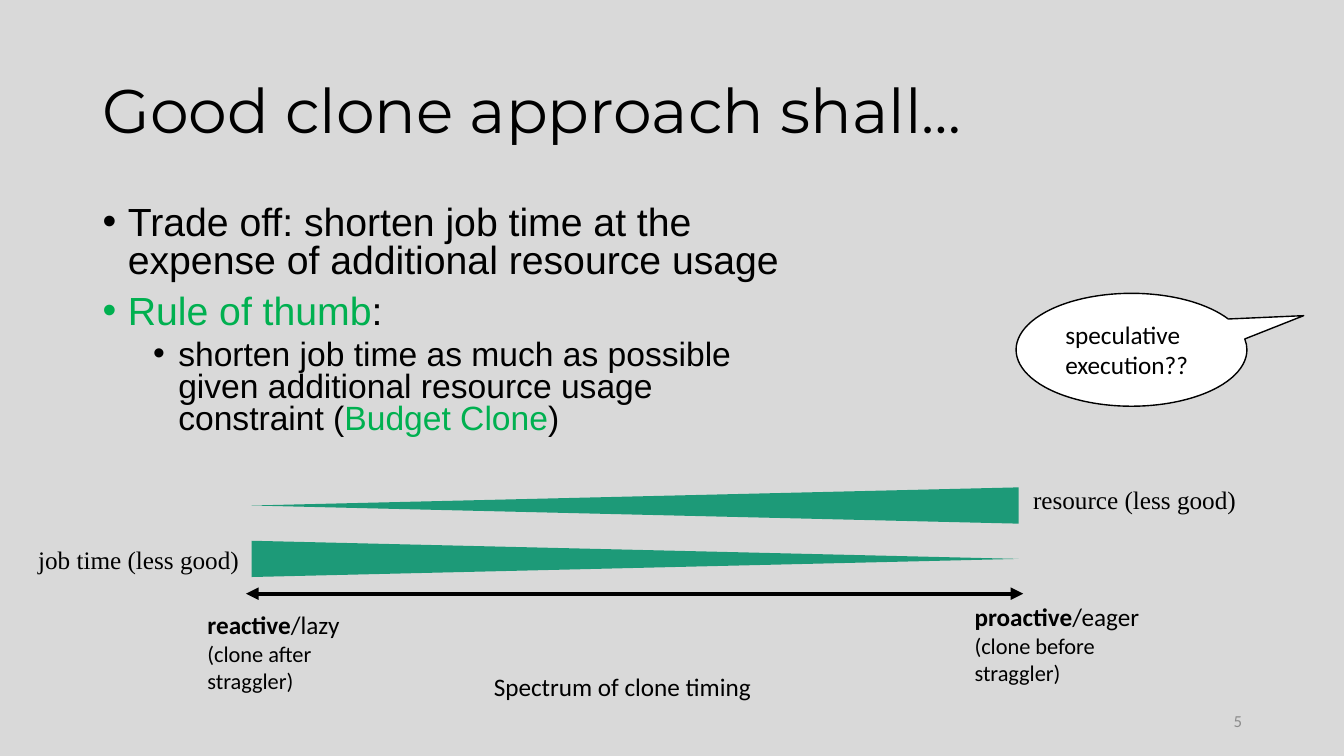
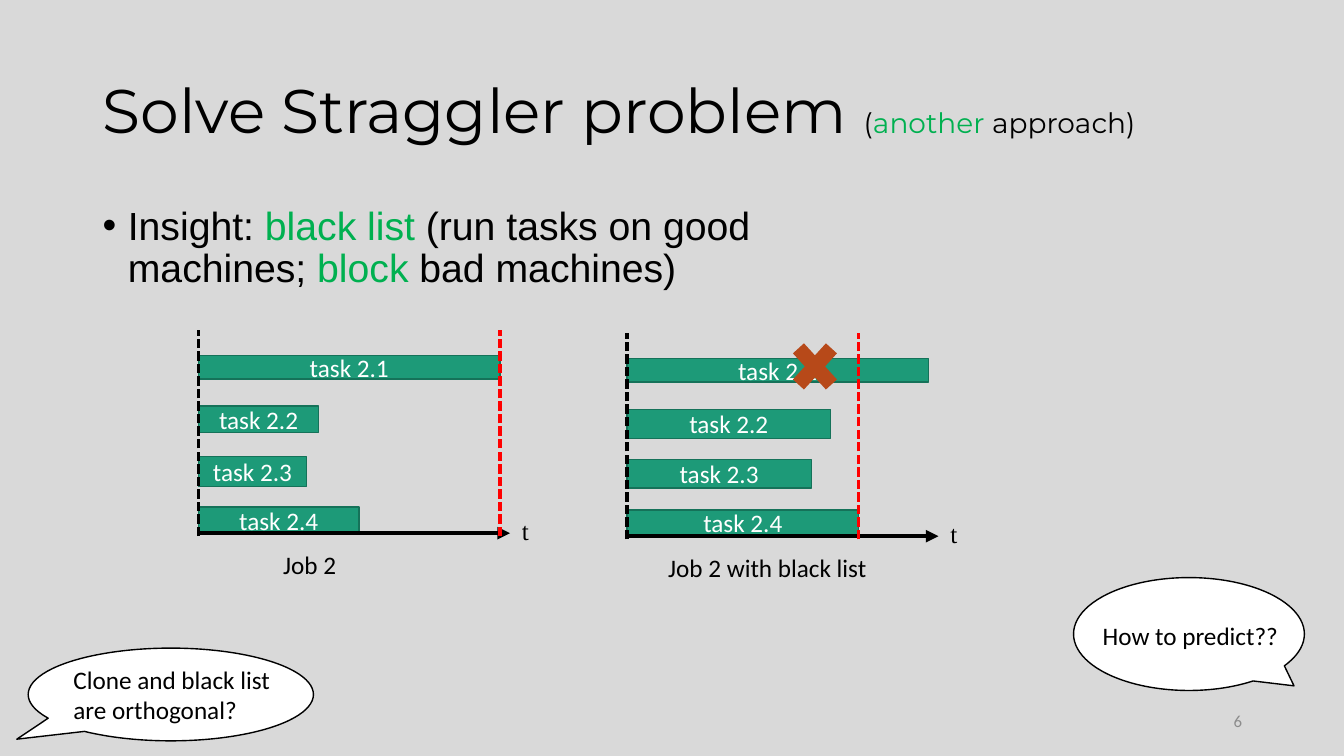
from typing import NamedTuple

from pptx import Presentation
from pptx.dml.color import RGBColor
from pptx.enum.dml import MSO_LINE as Dash
from pptx.enum.shapes import MSO_CONNECTOR as Conn, MSO_SHAPE as Shape
from pptx.enum.text import MSO_ANCHOR as Anchor, PP_ALIGN as Align
from pptx.oxml.ns import qn
from pptx.oxml.xmlchemy import OxmlElement as Node
from pptx.util import Emu, Inches, Pt

# The grid has square cells, ten to the inch: 133.33 columns by 75 rows.
CELL = Inches(0.1)
COLS, ROWS = 133.33, 75
EDGE = 9.2

BLACK, WHITE, GRAY = "000000", "FFFFFF", "8C8C8C"
BACK, TEAL, RIM = "D9D9D9", "1D9A78", "157259"
GREEN, RED, RUST = "00B050", "FF0000", "B74919"
HEAD, BODY, SANS, SERIF = "Montserrat", "Arial", "Calibri", "Times New Roman"


class Run(NamedTuple):
    text: str
    hue: str = BLACK
    size: float = 18
    bold: bool = False


def cells(*counts):
    return [Emu(round(n * CELL)) for n in counts]


def color(code):
    return RGBColor.from_string(code)


def add_runs(par, runs, font):
    for item in runs:
        run = par.add_run()
        run.text = item.text
        run.font.name = font
        run.font.size = Pt(item.size)
        run.font.bold = item.bold
        run.font.color.rgb = color(item.hue)


def add_text(shapes, box, pars, font=SANS, anchor=Anchor.TOP):
    """Add a text box; pars holds one list of runs per paragraph."""
    frame = shapes.add_textbox(*cells(*box)).text_frame
    frame.word_wrap = True
    frame.vertical_anchor = anchor
    for i, runs in enumerate(pars):
        par = frame.add_paragraph() if i else frame.paragraphs[0]
        add_runs(par, runs, font)
    return frame


def add_note(shapes, box, text, font=SANS):
    add_text(shapes, box, [[Run(text)]], font)


def add_bullets(shapes, rows, levels, pars, space):
    frame = add_text(shapes, (EDGE, 20, 69.2, rows), pars, BODY)
    for par, level in zip(frame.paragraphs, levels):
        par.level = level
        par.line_spacing = space
        par.space_before = Pt(5 if level else 10)
        props = par._p.get_or_add_pPr()
        props.set("marL", str(Inches(0.25 + 0.5 * level)))
        props.set("indent", str(Inches(-0.25)))
        face, mark = Node("a:buFont"), Node("a:buChar")
        face.set("typeface", BODY)
        mark.set("char", "•")
        props.extend([face, mark])


def add_form(shapes, kind, box, fill, rim=None):
    form = shapes.add_shape(kind, *cells(*box))
    form.shadow.inherit = False
    form.fill.solid()
    form.fill.fore_color.rgb = color(fill)
    if rim:
        form.line.color.rgb = color(rim)
        form.line.width = Pt(1)
    else:
        form.line.fill.background()
    return form


def add_line(shapes, start, end, hue=BLACK, width=3, dash=None, tips=()):
    """Add a line; tips names its arrowheads, headEnd before tailEnd."""
    link = shapes.add_connector(Conn.STRAIGHT, *cells(*start, *end))
    link.line.color.rgb = color(hue)
    link.line.width = Pt(width)
    if dash:
        link.line.dash_style = dash
    props = link.element.spPr
    for name in tips:
        tip = Node(f"a:{name}")
        tip.set("type", "triangle")
        props.find(qn("a:ln")).append(tip)
    props.append(Node("a:effectLst"))


def add_wedge(shapes, mid, turn):
    """Add a long thin triangle centred on row mid."""
    wide, long = 3.6, 76.1
    box = (63 - wide / 2, mid - long / 2, wide, long)
    add_form(shapes, Shape.ISOSCELES_TRIANGLE, box, TEAL).rotation = turn


def add_bubble(shapes, box, tip, area, text):
    form = add_form(shapes, Shape.OVAL_CALLOUT, box, WHITE, BLACK)
    for i, share in enumerate(tip):
        form.adjustments[i] = share
    add_note(shapes, area, text)


def add_end(shapes, text, verb, left, top):
    """Describe one end of the spectrum."""
    pars = [[Run(text, bold=True), Run("/" + verb[0])],
            [Run(f"(clone {verb[1]} straggler)", size=16)]]
    add_text(shapes, (left, top, 19.7, 9.4), pars)


def add_job(slide, left, top, bars, limit, name, shift, wide):
    """Chart a job: bars are (length, height), limit is its finish."""
    shapes = slide.shapes.add_group_shape().shapes
    for i, (long, high) in enumerate(bars):
        box = (left, top + 5 * i, long, high)
        bar = add_form(shapes, Shape.RECTANGLE, box, TEAL, RIM)
        frame = bar.text_frame
        frame.vertical_anchor = Anchor.MIDDLE
        par = frame.paragraphs[0]
        par.alignment = Align.CENTER
        add_runs(par, [Run(f"task 2.{i + 1}", WHITE)], SANS)
    add_note(shapes, (left + 31.1, top + 15.3, 4.1, 4), "t", SERIF)
    add_note(shapes, (left + shift, top + 18.7, wide, 4), name)
    axis = top + 17.6
    add_line(shapes, (left, axis), (left + 30.9, axis), tips=["tailEnd"])
    for x, hue in ((left, BLACK), (left + limit, RED)):
        add_line(shapes, (x, top + 17.9), (x, top - 2.6), hue, 2.25,
                 Dash.SQUARE_DOT)


def add_slide(deck, title, number):
    slide = deck.slides.add_slide(deck.slide_layouts[6])
    head = add_text(slide.shapes, (EDGE, 4, 115, 14.5), [title], HEAD,
                    Anchor.MIDDLE)
    head.paragraphs[0].line_spacing = 0.9
    foot = add_text(slide.shapes, (94.2, 69.5, 30, 4),
                    [[Run(str(number), GRAY, 12)]], anchor=Anchor.MIDDLE)
    foot.paragraphs[0].alignment = Align.RIGHT
    return slide


def add_clone(deck):
    slide = add_slide(deck, [Run("Good clone approach shall…", size=44)], 5)
    shapes = slide.shapes
    add_bullets(shapes, 29.6, (0, 0, 1), [
        [Run("Trade off: shorten job time at the expense of additional "
             "resource usage", size=28)],
        [Run("Rule of thumb", GREEN, 28), Run(":", size=28)],
        [Run("shorten job time as much as possible given additional "
             "resource usage constraint (", size=24),
         Run("Budget Clone", GREEN, 24), Run(")", size=24)],
    ], 0.8)
    add_line(shapes, (24.4, 58.9), (101.5, 58.9),
             tips=["headEnd", "tailEnd"])
    add_end(shapes, "proactive", ("eager", "before"), 95.7, 59.2)
    add_end(shapes, "reactive", ("lazy", "after"), 19.6, 60)
    add_note(shapes, (48, 66.1, 28.5, 4), "Spectrum of clone timing")
    add_note(shapes, (101.5, 47.6, 31.8, 4), "resource (less good)", SERIF)
    add_wedge(shapes, 50.15, 270)
    add_wedge(shapes, 55.45, 90)
    add_note(shapes, (2.8, 53.5, 23.2, 4), "job time (less good)", SERIF)
    add_bubble(shapes, (100.8, 29.1, 22.9, 11.2), (0.746, -0.302),
               (104.7, 31.2, 19.5, 7.1), "speculative execution??")


def add_block(deck):
    slide = add_slide(deck, [
        Run("Solve Straggler problem ", size=44), Run("(", size=20),
        Run("another", GREEN, 20), Run(" approach)", size=20)], 6)
    shapes = slide.shapes
    add_bullets(shapes, 21.5, (0,), [[
        Run("Insight: ", size=28), Run("black list ", GREEN, 28),
        Run("(run tasks on good machines; ", size=28),
        Run("block", GREEN, 28), Run(" bad machines)", size=28)]], 0.9)
    add_job(slide, 19.7, 35.3,
            [(29.9, 2.3), (11.9, 2.6), (10.7, 3), (15.9, 2.6)],
            29.9, "Job 2", 7.4, 10.9)
    add_job(slide, 62.2, 35.6,
            [(29.9, 2.3), (20.2, 2.9), (18.3, 2.8), (23, 2.5)],
            23, "Job 2 with black list", 3.1, 25.1)
    add_form(shapes, Shape.MATH_MULTIPLY, (77.7, 32.9, 6.3, 6.9), RUST)
    add_bubble(shapes, (106.5, 57.3, 22.9, 11.2), (0.455, 0.459),
               (108.4, 61, 19.5, 4), "How to predict??")
    add_bubble(shapes, (2.8, 64.3, 28.3, 9.2), (-0.54, 0.482),
               (6.3, 65.4, 23.3, 7.1), "Clone and black list are orthogonal?")


def main():
    deck = Presentation()
    deck.slide_width, deck.slide_height = cells(COLS, ROWS)
    back = deck.slide_master.background.fill
    back.solid()
    back.fore_color.rgb = color(BACK)
    add_clone(deck)
    add_block(deck)
    deck.save("out.pptx")


if __name__ == "__main__":
    main()
